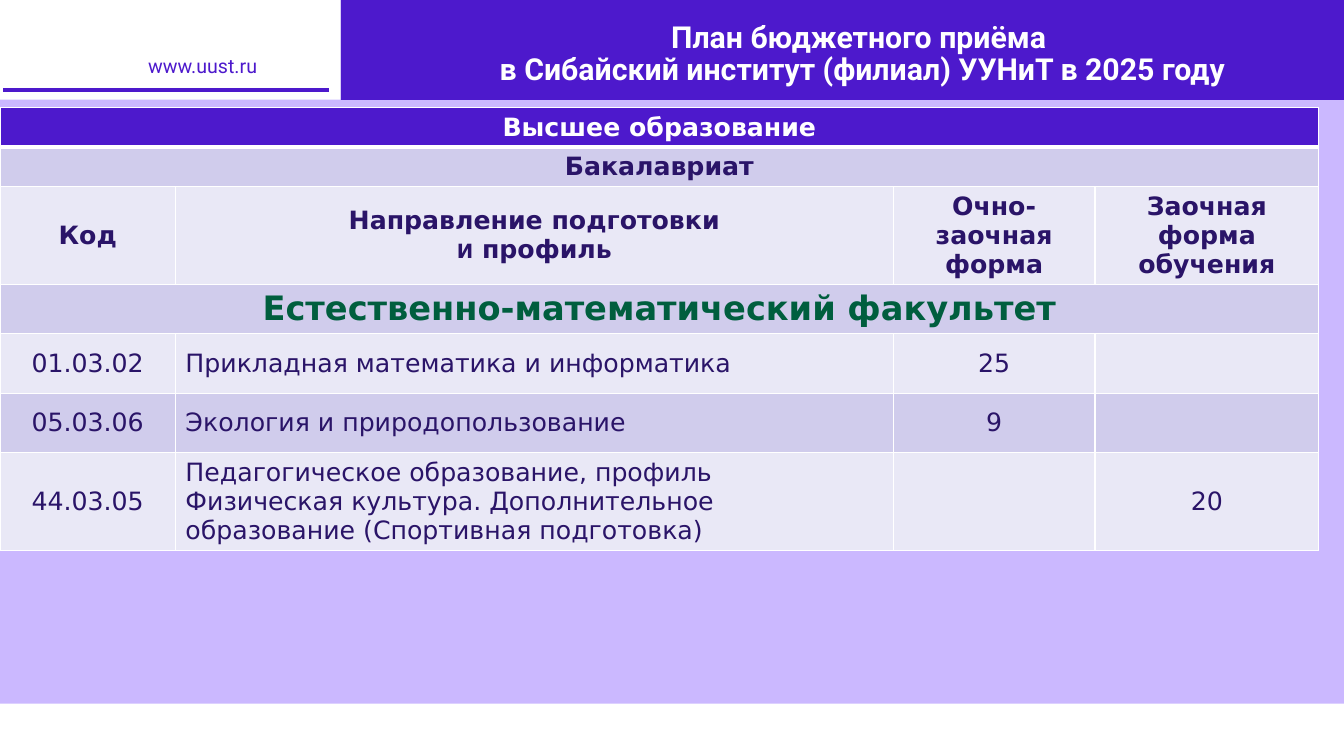
import dataclasses

import pptx
import pptx.dml.color
import pptx.enum.shapes
import pptx.enum.text
import pptx.oxml
import pptx.oxml.ns
import pptx.util

Inches = pptx.util.Inches
Pt = pptx.util.Pt
ALIGN = pptx.enum.text.PP_ALIGN
ANCHOR = pptx.enum.text.MSO_ANCHOR


@dataclasses.dataclass(frozen=True)
class Theme:
    violet: str = "4D19CC"
    lilac: str = "CBB8FF"
    white: str = "FFFFFF"
    ink: str = "2A1468"
    green: str = "005E3E"
    band_dark: str = "D0CCEC"
    band_light: str = "E9E8F6"
    heading_font: str = "Roboto"
    table_font: str = "DejaVu Sans"
    title_size: float = 21.6
    site_size: float = 14
    faculty_size: float = 24
    cell_size: float = 18
    small_size: float = 14


THEME = Theme()

COLUMN_WIDTHS = [1.74, 7.12, 2, 2.22]
ROW_HEIGHTS = [0.35, 0.37, 0.89, 0.44, 0.59, 0.59, 0.89]
BANNERS = {  # row: text, colour, size
    0: ("Высшее образование", THEME.white, THEME.cell_size),
    1: ("Бакалавриат", THEME.ink, THEME.cell_size),
    3: ("Естественно-математический факультет", THEME.green, THEME.faculty_size),
}
HEADER_ROW = 2
HEADERS = ["Код", "Направление подготовки\nИ профиль",
           "Очно-заочная форма", "Заочная форма обучения"]
FIRST_PROGRAMME_ROW = 4
PROGRAMMES = [
    ["01.03.02", "Прикладная математика и информатика", "25", ""],
    ["05.03.06", "Экология и природопользование", "9", ""],
    ["44.03.05", "Педагогическое образование, профиль\nФизическая культура. "
     "Дополнительное образование (Спортивная подготовка)", "", "20"],
]


def rgb(colour):
    return pptx.dml.color.RGBColor.from_string(colour)


def style_paragraph(paragraph, font, size, colour, bold=False, align=ALIGN.LEFT):
    paragraph.alignment = align
    paragraph.font.name = font
    paragraph.font.size = Pt(size)
    paragraph.font.bold = bold
    paragraph.font.color.rgb = rgb(colour)


def add_block(slide, left, top, width, height, colour, outline=None):
    block = slide.shapes.add_shape(
        pptx.enum.shapes.MSO_SHAPE.RECTANGLE,
        Inches(left), Inches(top), Inches(width), Inches(height))
    block.shadow.inherit = False
    block.fill.solid()
    block.fill.fore_color.rgb = rgb(colour)
    if outline:
        block.line.color.rgb = rgb(outline)
        block.line.width = Pt(4.5)
    else:
        block.line.fill.background()


def add_site_address(slide):
    site = slide.shapes.add_textbox(Inches(1.37), Inches(0.53), Inches(1.56), Inches(0.27))
    frame = site.text_frame
    frame.word_wrap = True
    frame.vertical_anchor = ANCHOR.MIDDLE
    address = frame.paragraphs[0]
    address.text = "www.uust.ru"
    address.line_spacing = 0.9
    style_paragraph(address, THEME.heading_font, THEME.site_size, THEME.violet)


def place_title(slide):
    title = slide.shapes.title
    # Bring the title in front of the header band
    title.element.getparent().append(title.element)
    title.left, title.top = Inches(4.32), Inches(0.17)
    title.width, title.height = Inches(8.47), Inches(0.46)
    frame = title.text_frame
    frame.word_wrap = True
    frame.auto_size = pptx.enum.text.MSO_AUTO_SIZE.NONE
    frame.vertical_anchor = ANCHOR.TOP
    heading = frame.paragraphs[0]
    heading.text = "План бюджетного приёма \vв Сибайский институт (филиал) УУНиТ в 2025 году"
    heading.line_spacing = 0.9
    style_paragraph(heading, THEME.heading_font, THEME.title_size, THEME.white, True, ALIGN.CENTER)


def set_borders(cell, bottom=1):
    properties = cell._tc.get_or_add_tcPr()
    for side, width in (("L", 1), ("R", 1), ("T", 1), ("B", bottom)):
        properties.append(pptx.oxml.parse_xml(
            f'<a:ln{side} {pptx.oxml.ns.nsdecls("a")} w="{Pt(width)}"><a:solidFill>'
            f'<a:srgbClr val="{THEME.white}"/></a:solidFill></a:ln{side}>'))


def fill_cell(cell, text, colour=THEME.ink, size=THEME.cell_size, bold=False,
              align=ALIGN.CENTER, anchor=ANCHOR.MIDDLE):
    cell.vertical_anchor = anchor
    cell.text = text
    for paragraph in cell.text_frame.paragraphs:
        style_paragraph(paragraph, THEME.table_font, size, colour, bold, align)


def add_admission_table(slide):
    plan = slide.shapes.add_table(
        len(ROW_HEIGHTS), len(COLUMN_WIDTHS), Inches(0), Inches(1.07),
        Inches(sum(COLUMN_WIDTHS)), Inches(sum(ROW_HEIGHTS))).table
    for column, width in zip(plan.columns, COLUMN_WIDTHS):
        column.width = Inches(width)

    # Row heights, borders and bands
    for index, (row, height) in enumerate(zip(plan.rows, ROW_HEIGHTS)):
        row.height = Inches(height)
        band = THEME.band_dark if index % 2 else THEME.band_light
        for cell in row.cells:
            set_borders(cell, bottom=1 if index else 3)
            cell.fill.solid()
            cell.fill.fore_color.rgb = rgb(band if index else THEME.violet)

    # Full-width banners
    for index, (text, colour, size) in BANNERS.items():
        banner = plan.cell(index, 0)
        banner.merge(plan.cell(index, len(COLUMN_WIDTHS) - 1))
        fill_cell(banner, text, colour, size, bold=True, anchor=ANCHOR.TOP)

    # Column headings
    for column, text in enumerate(HEADERS):
        fill_cell(plan.cell(HEADER_ROW, column), text, bold=True)
    profile = plan.cell(HEADER_ROW, 1).text_frame.paragraphs[1]
    initial, rest = profile.runs[0], profile.add_run()
    initial.text, rest.text = "И", " профиль"
    initial.font.size = Pt(THEME.small_size)

    # Programmes
    for index, programme in enumerate(PROGRAMMES, FIRST_PROGRAMME_ROW):
        for column, text in enumerate(programme):
            align = ALIGN.LEFT if column == 1 else ALIGN.CENTER
            fill_cell(plan.cell(index, column), text, align=align)


def main():
    deck = pptx.Presentation()
    deck.slide_width, deck.slide_height = Inches(13.33), Inches(7.5)
    slide = deck.slides.add_slide(deck.slide_layouts[5])
    slide.background.fill.solid()
    slide.background.fill.fore_color.rgb = rgb(THEME.lilac)

    # Header and footer bands
    add_block(slide, 0, -0.02, 3.38, 1.01, THEME.white)
    add_block(slide, 3.38, 0, 9.95, 0.99, THEME.violet)
    add_block(slide, 0, 0.84, 3.3, 0.1, THEME.violet, outline=THEME.white)
    add_site_address(slide)
    add_block(slide, 0, 6.98, 13.33, 0.52, THEME.white)

    # Content
    place_title(slide)
    add_admission_table(slide)
    deck.save("out.pptx")


if __name__ == "__main__":
    main()
